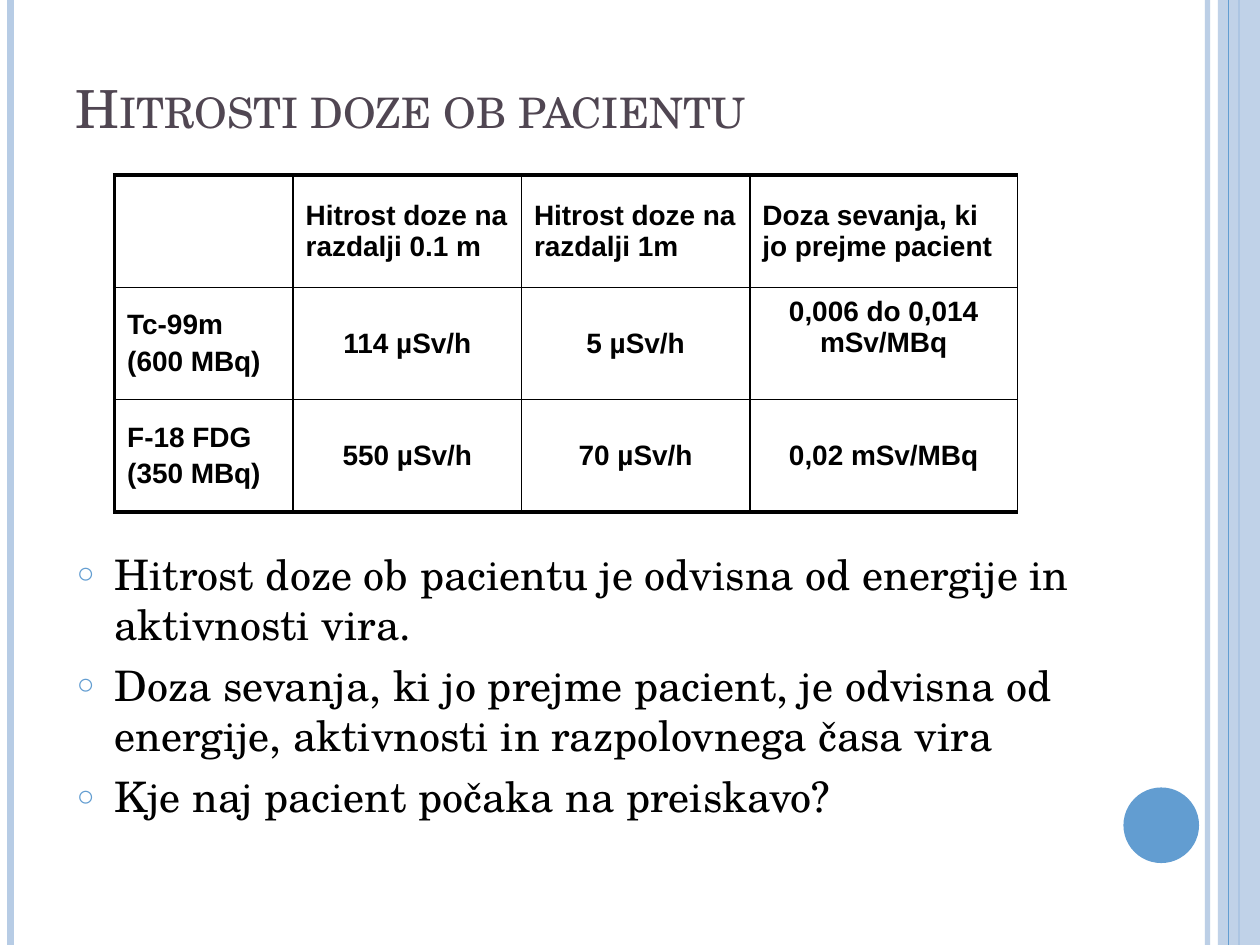
from lxml import etree
from pptx import Presentation
from pptx.dml.color import RGBColor
from pptx.enum.shapes import MSO_CONNECTOR, MSO_SHAPE
from pptx.enum.text import MSO_ANCHOR, MSO_AUTO_SIZE, PP_ALIGN
from pptx.oxml.ns import qn
from pptx.util import Pt

LEFT, CENTER = PP_ALIGN.LEFT, PP_ALIGN.CENTER
TOP, MIDDLE, BOTTOM = MSO_ANCHOR.TOP, MSO_ANCHOR.MIDDLE, MSO_ANCHOR.BOTTOM
SERIF, SANS = "TeX Gyre Schola", "Arial"
PALE, BLUE, PLUM, BLACK = "B7CCE5", "629DD1", "504652", "000000"
WIDTH, HEIGHT = 720, 540

TITLE = "Hitrosti doze ob pacientu"
ROWS = [
    ["", "Hitrost doze na razdalji 0.1 m", "Hitrost doze na razdalji 1m",
     "Doza sevanja, ki jo prejme pacient"],
    ["Tc-99m\n(600 MBq)", "114 µSv/h", "5 µSv/h", "0,006 do 0,014 mSv/MBq"],
    ["F-18 FDG\n(350 MBq)", "550 µSv/h", "70 µSv/h", "0,02 mSv/MBq"],
]
BULLETS = [
    "Hitrost doze ob pacientu je odvisna od energije in aktivnosti vira.",
    "Doza sevanja, ki jo prejme pacient, je odvisna od energije, aktivnosti "
    "in razpolovnega časa vira",
    "Kje naj pacient počaka na preiskavo?",
]
TABLE_LEFT, TABLE_TOP, ROW_HEIGHT = 65.5, 100, 64.2
COLUMN_WIDTHS = [102, 130.5, 130.5, 153]
THIN, THICK = 1, 2.25
# x, width, colour, opacity in percent
STRIPES = [(690, 3, PALE, 93), (6, 4.5, PALE, 100), (708, 1.5, BLUE, 100)]
INNER_STRIPE = (702, 0.75, BLUE, 100)


def rgb(value):
    return RGBColor.from_string(value)


def set_alpha(sp, percent):
    for color in sp._element.spPr.iter(qn("a:srgbClr")):
        etree.SubElement(color, qn("a:alpha"), val=str(percent * 1000))


def add_stripe(slide, x, width, color, opacity):
    line = slide.shapes.add_connector(MSO_CONNECTOR.STRAIGHT, Pt(x), 0, Pt(x), Pt(HEIGHT))
    line.line.width = Pt(width)
    line.line.color.rgb = rgb(color)
    if opacity < 100:
        set_alpha(line, opacity)
    etree.SubElement(line._element.spPr, qn("a:effectLst"))


def add_block(slide, kind, x, y, w, h, color):
    sp = slide.shapes.add_shape(kind, Pt(x), Pt(y), Pt(w), Pt(h))
    sp.shadow.inherit = False
    sp.fill.solid()
    sp.fill.fore_color.rgb = rgb(color)
    sp.line.fill.background()
    return sp


def write(tf, text, font=SERIF, size=24, color=BLACK, bold=False, align=LEFT, before=0):
    tf.text = text
    for p in tf.paragraphs:
        p.alignment = align
        p.space_before = Pt(before)
        for r in p.runs:
            r.font.name, r.font.size, r.font.bold = font, Pt(size), bold
            r.font.color.rgb = rgb(color)


def place(sp, x, y, w, h, anchor):
    sp.left, sp.top, sp.width, sp.height = Pt(x), Pt(y), Pt(w), Pt(h)
    sp.text_frame.auto_size = MSO_AUTO_SIZE.NONE
    sp.text_frame.vertical_anchor = anchor


def add_bullet(p):
    pPr = p._p.get_or_add_pPr()
    pPr.set("marL", str(Pt(21.6)))
    pPr.set("indent", str(-Pt(21.6)))
    color = etree.SubElement(pPr, qn("a:buClr"))
    etree.SubElement(color, qn("a:srgbClr"), val=BLUE)
    etree.SubElement(pPr, qn("a:buSzPct"), val="70000")
    etree.SubElement(pPr, qn("a:buChar"), char="○")


def set_borders(cell, **widths):
    tcPr = cell._tc.get_or_add_tcPr()
    for i, (side, width) in enumerate(widths.items()):
        ln = etree.Element(qn("a:ln" + side), w=str(Pt(width)))
        fill = etree.SubElement(ln, qn("a:solidFill"))
        etree.SubElement(fill, qn("a:srgbClr"), val=BLACK)
        tcPr.insert(i, ln)


def add_dose_table(slide):
    last = len(ROWS) - 1
    table = slide.shapes.add_table(
        len(ROWS), len(COLUMN_WIDTHS), Pt(TABLE_LEFT), Pt(TABLE_TOP),
        Pt(sum(COLUMN_WIDTHS)), Pt(ROW_HEIGHT * len(ROWS))).table
    table.first_row = table.horz_banding = False
    for column, width in zip(table.columns, COLUMN_WIDTHS):
        column.width = Pt(width)
    for i, row in enumerate(ROWS):
        table.rows[i].height = Pt(ROW_HEIGHT)
        for j, text in enumerate(row):
            cell = table.cell(i, j)
            cell.fill.background()
            cell.vertical_anchor = MIDDLE
            write(cell.text_frame, text, font=SANS, size=16, bold=True,
                  align=CENTER if i and j else LEFT, before=3.2)
            set_borders(cell, L=THIN if j else THICK, R=THIN,
                        T=THIN if i else THICK, B=THICK if i == last else THIN)
    dose_range = table.cell(1, 3)
    dose_range.vertical_anchor = TOP
    dose_range.margin_top = Pt(5)


def main():
    prs = Presentation()
    prs.slide_width, prs.slide_height = Pt(WIDTH), Pt(HEIGHT)
    slide = prs.slides.add_slide(prs.slide_layouts[1])

    for stripe in STRIPES:
        add_stripe(slide, *stripe)
    band = add_block(slide, MSO_SHAPE.RECTANGLE, 696, 0, 24, HEIGHT, PALE)
    set_alpha(band, 87)
    add_stripe(slide, *INNER_STRIPE)
    add_block(slide, MSO_SHAPE.OVAL, 642, 450, 43.2, 43.2, BLUE)

    title = slide.shapes.title
    place(title, 36, 21.6, 588, 61.2, BOTTOM)
    write(title.text_frame, TITLE, size=30, color=PLUM)
    title.text_frame.paragraphs[0].runs[0].font._element.set("cap", "small")

    add_dose_table(slide)

    body = slide.placeholders[1]
    place(body, 36.7, 309.6, 629.3, 175.7, TOP)
    write(body.text_frame, "\n".join(BULLETS), before=6)
    for p in body.text_frame.paragraphs:
        add_bullet(p)

    prs.save("out.pptx")


if __name__ == "__main__":
    main()
